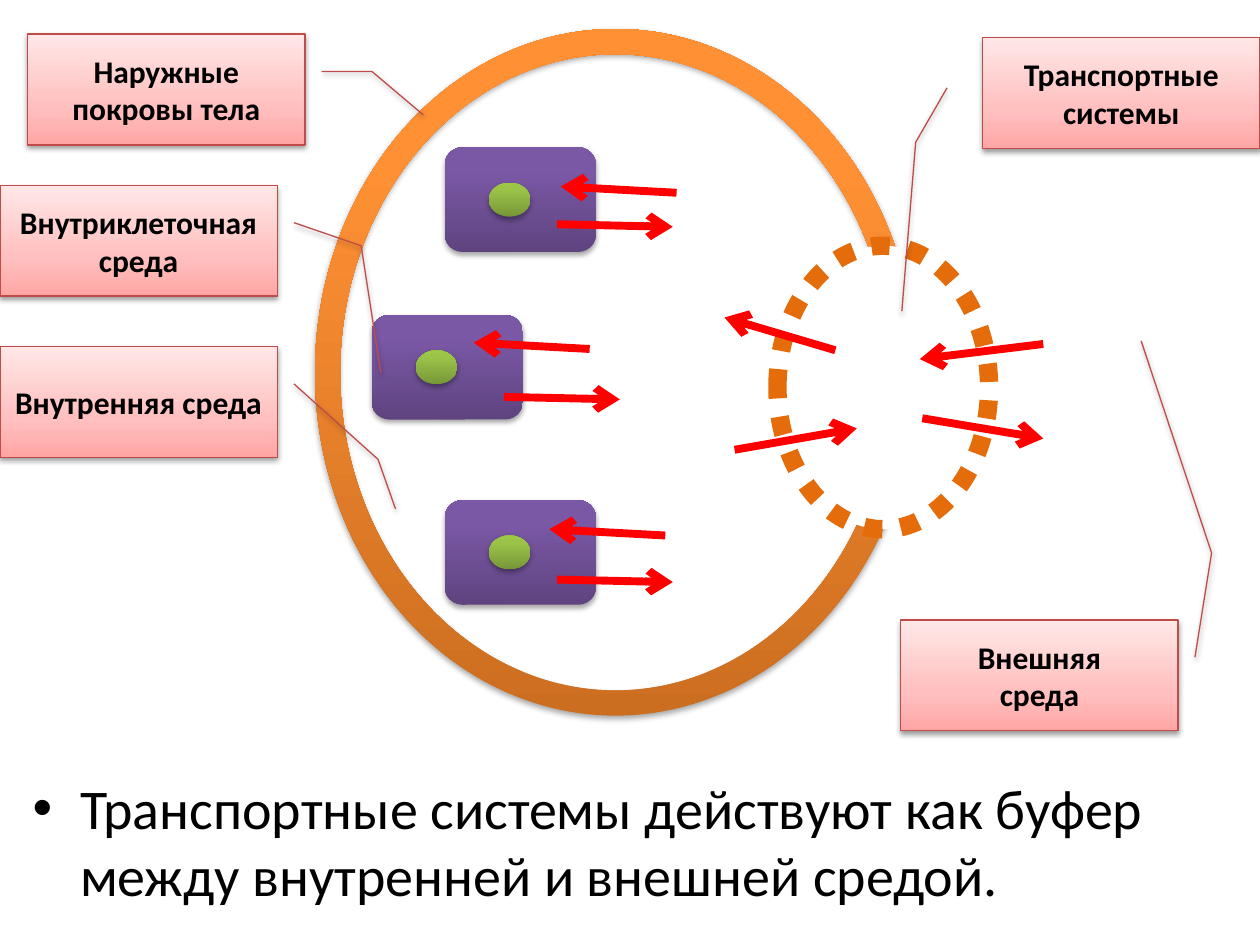
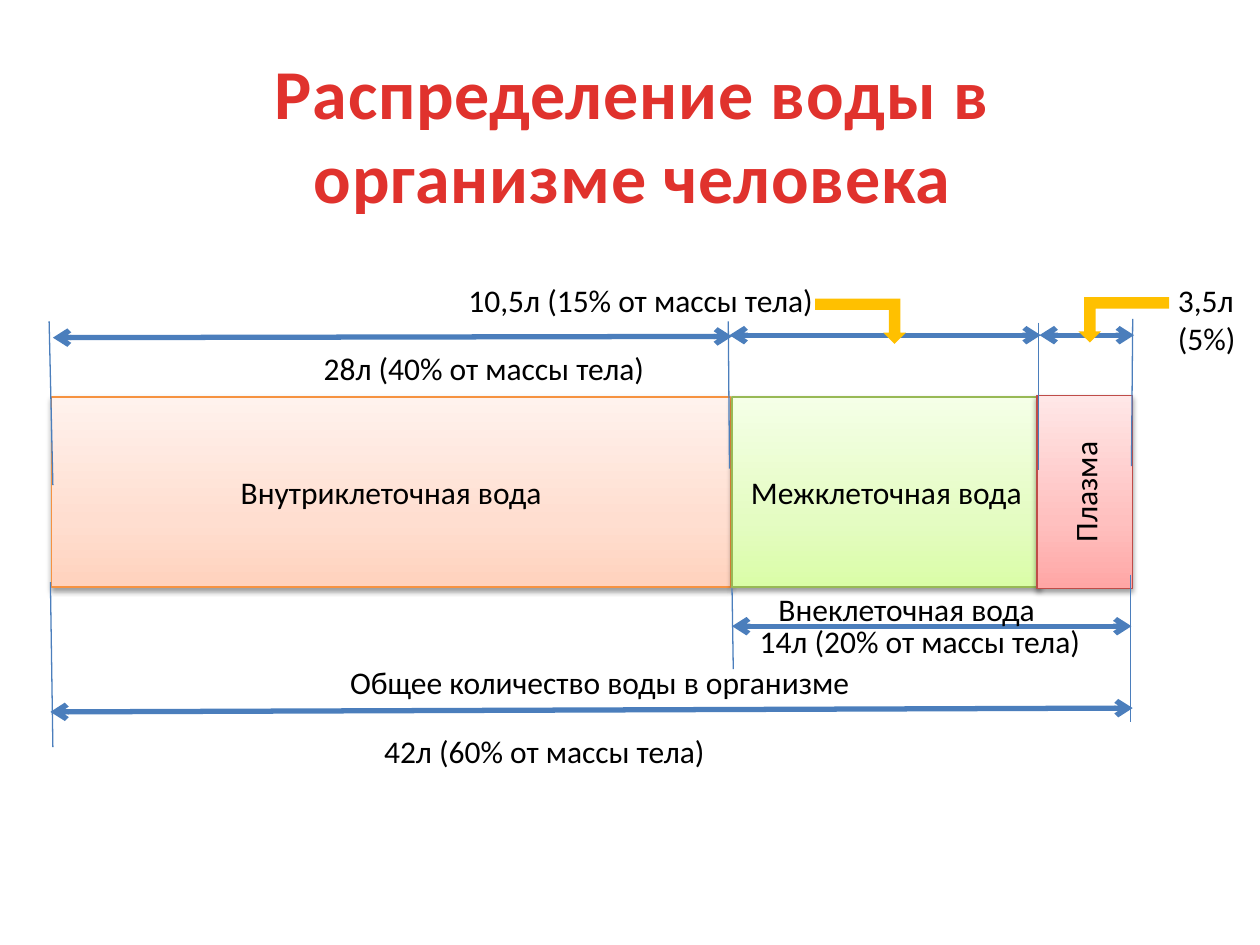
import dataclasses

import lxml.etree
import pptx
import pptx.dml.color
import pptx.enum.dml
import pptx.enum.shapes
import pptx.enum.text
import pptx.oxml.ns
import pptx.util

Inches = pptx.util.Inches
Pt = pptx.util.Pt
qn = pptx.oxml.ns.qn
SHAPE = pptx.enum.shapes.MSO_SHAPE
ALIGN = pptx.enum.text.PP_ALIGN
ANCHOR = pptx.enum.text.MSO_ANCHOR
FIT = pptx.enum.text.MSO_AUTO_SIZE


@dataclasses.dataclass(frozen=True)
class Theme:
    """Colours as RRGGBB, gradients as (percent, colour) stops from the bottom up, sizes in points."""
    font: str = "Calibri"
    text: str = "000000"
    paper: str = "FFFFFF"
    title: str = "E0322D"
    membrane: str = "E46C0A"
    flow: str = "FF0000"
    dimension: str = "4B7EBC"
    pointer: str = "FFC000"
    skin: tuple = ((0, "CC6E20"), (80, "FF9034"), (100, "FF9136"))
    cell: tuple = ((0, "5F4480"), (80, "7B58A6"), (100, "7C57A8"))
    nucleus: tuple = ((0, "779737"), (80, "9BC348"), (100, "9DC746"))
    pink: tuple = ((0, "FFA6A5"), (35, "FFC0BF"), (100, "FFE7E7"))
    peach: tuple = ((0, "FFD2BD"), (35, "FFDED0"), (100, "FFF2ED"))
    lime: tuple = ((0, "DAFDA7"), (35, "E4FCC2"), (100, "F5FFE7"))
    pink_edge: str = "BF4C48"
    peach_edge: str = "F69240"
    lime_edge: str = "98B955"
    title_size: int = 40
    body_size: int = 32
    label_size: int = 18
    thin: float = 0.75
    dimension_width: float = 3
    flow_width: float = 4.5
    membrane_width: float = 10.5


def rgb(code):
    return pptx.dml.color.RGBColor.from_string(code)


def add_xml(parent, tag, **attributes):
    return lxml.etree.SubElement(parent, qn(tag), attributes)


class Deck:
    def __init__(self, theme):
        self.theme = theme
        self.show = pptx.Presentation()
        self.show.slide_width, self.show.slide_height = Inches(10), Inches(7.5)
        self.slide = None

    def new_slide(self, layout):
        self.slide = self.show.slides.add_slide(self.show.slide_layouts.get_by_name(layout))
        background = self.slide.background.fill
        background.solid()
        background.fore_color.rgb = rgb(self.theme.paper)

    def set_text(self, frame, text, size, color=None, align=ALIGN.LEFT, bold=False, **frame_format):
        frame.text = text
        for key, value in frame_format.items():
            setattr(frame, key, value)
        font_format = {"name": self.theme.font, "size": Pt(size), "bold": bold}
        for paragraph in frame.paragraphs:
            paragraph.alignment = align
            font = paragraph.runs[0].font
            for key, value in font_format.items():
                setattr(font, key, value)
            font.color.rgb = rgb(color or self.theme.text)

    def place(self, target, left, top, width, height):
        box = {"left": left, "top": top, "width": width, "height": height}
        for key, value in box.items():
            setattr(target, key, Inches(value))

    def title(self, text, *box):
        heading = self.slide.shapes.title
        self.place(heading, *box)
        self.set_text(heading.text_frame, text, self.theme.title_size, self.theme.title,
                      ALIGN.CENTER, True, auto_size=FIT.NONE, vertical_anchor=ANCHOR.TOP)
        run = heading.text_frame.paragraphs[0].runs[0]
        run._r.get_or_add_rPr().set("spc", "50")

    def body(self, text, *box):
        """Fill the bulleted placeholder of a slide that has no title."""
        heading = self.slide.shapes.title
        heading.element.getparent().remove(heading.element)
        bullets = self.slide.placeholders[1]
        self.place(bullets, *box)
        self.set_text(bullets.text_frame, text, self.theme.body_size, auto_size=FIT.NONE)

    def label(self, text, left, top, width, height=0.4, wrap=False):
        box = self.slide.shapes.add_textbox(*map(Inches, (left, top, width, height)))
        self.set_text(box.text_frame, text, self.theme.label_size,
                      word_wrap=wrap, auto_size=FIT.SHAPE_TO_FIT_TEXT)

    def shape(self, kind, box, fill, edge=None, edge_width=None, adjust=(), shapes=None):
        """A flat fill is a colour; a gradient fill is a tuple of stops and casts a shadow."""
        shapes = self.slide.shapes if shapes is None else shapes
        shape = shapes.add_shape(kind, *map(Inches, box))
        for index, value in enumerate(adjust):
            shape.adjustments[index] = value
        shape.shadow.inherit = False
        if isinstance(fill, str):
            shape.fill.solid()
            shape.fill.fore_color.rgb = rgb(fill)
        else:
            self.gradient(shape, fill)
            self.shadow(shape, 38 if edge else 35)
        if edge:
            shape.line.color.rgb = rgb(edge)
            shape.line.width = Pt(edge_width or self.theme.thin)
        else:
            shape.line.fill.background()
        return shape

    def gradient(self, shape, stops):
        shape.fill.gradient()
        shape.fill.gradient_angle = 90
        stop_list = shape.element.spPr.find(qn("a:gradFill")).find(qn("a:gsLst"))
        for old in list(stop_list):
            stop_list.remove(old)
        for percent, color in stops:
            stop = add_xml(stop_list, "a:gs", pos=str(percent * 1000))
            add_xml(stop, "a:srgbClr", val=color)

    def shadow(self, shape, opacity):
        effects = shape.element.spPr.find(qn("a:effectLst"))
        cast = add_xml(effects, "a:outerShdw", blurRad=str(Pt(3.1)), dist=str(Pt(1.7)),
                       dir="5400000", rotWithShape="0")
        color = add_xml(cast, "a:srgbClr", val="000000")
        add_xml(color, "a:alpha", val=str(opacity * 1000))

    def panel(self, text, kind, box, fill, edge, bold=False, adjust=()):
        panel = self.shape(kind, box, fill, edge, adjust=adjust)
        self.set_text(panel.text_frame, text, self.theme.label_size, align=ALIGN.CENTER,
                      bold=bold, word_wrap=True, vertical_anchor=ANCHOR.MIDDLE)
        return panel

    def callout(self, text, left, top, leader):
        self.panel(text, SHAPE.LINE_CALLOUT_2, (left, top, 2.2, 0.88), self.theme.pink,
                   self.theme.pink_edge, True, leader)

    def cell(self, left, top):
        group = self.slide.shapes.add_group_shape()
        self.shape(SHAPE.FLOWCHART_ALTERNATE_PROCESS, (left, top, 1.2, 0.83),
                   self.theme.cell, shapes=group.shapes)
        self.shape(SHAPE.OVAL, (left + 0.35, top + 0.28, 0.33, 0.27),
                   self.theme.nucleus, shapes=group.shapes)

    def line(self, start, end, color, width, arrows=()):
        """Arrows names the ends that get an arrowhead, headEnd before tailEnd."""
        line = self.slide.shapes.add_connector(
            pptx.enum.shapes.MSO_CONNECTOR.STRAIGHT, *map(Inches, (*start, *end)))
        line.line.color.rgb = rgb(color)
        line.line.width = Pt(width)
        properties = line._element.spPr
        for arrow in arrows:
            add_xml(properties.find(qn("a:ln")), "a:" + arrow, type="arrow")
        add_xml(properties, "a:effectLst")

    def flow(self, start, end):
        self.line(start, end, self.theme.flow, self.theme.flow_width, ["tailEnd"])

    def dimension(self, start, end):
        self.line(start, end, self.theme.dimension, self.theme.dimension_width,
                  ["headEnd", "tailEnd"])

    def boundary(self, start, end):
        self.line(start, end, self.theme.dimension, self.theme.thin)

    def pointer(self, left, top, **flips):
        arrow = self.shape(SHAPE.BENT_UP_ARROW, (left, top, 0.72, 0.36), self.theme.pointer)
        for key, value in flips.items():
            arrow.element.spPr.find(qn("a:xfrm")).set(key, value)


def exchange_slide(deck):
    theme = deck.theme
    deck.new_slide("Title and Content")
    deck.body("Транспортные системы действуют как буфер между внутренней и внешней средой.",
              0.16, 6.09, 9.84, 1.41)
    deck.shape(SHAPE.DONUT, (2.5, 0.23, 4.77, 5.45), theme.skin, adjust=[0.042])
    for left, top in [(2.95, 2.5), (3.53, 1.17), (3.53, 3.97)]:
        deck.cell(left, top)
    transport = deck.shape(SHAPE.OVAL, (6.17, 1.95, 1.68, 2.25), theme.paper,
                           theme.membrane, theme.membrane_width)
    transport.line.dash_style = pptx.enum.dml.MSO_LINE.ROUND_DOT

    for x, y in [(5.37, 1.53), (4.68, 2.77), (5.28, 4.25)]:
        deck.flow((x, y), (x - 0.92, y - 0.05))
    for x, y in [(4.42, 1.78), (4, 3.15), (4.42, 4.6)]:
        deck.flow((x, y), (x + 0.92, y + 0.02))
    for start, end in [((6.63, 2.78), (5.75, 2.52)), ((5.83, 3.57), (6.8, 3.4)),
                       ((8.28, 2.73), (7.3, 2.85)), ((7.32, 3.32), (8.28, 3.48))]:
        deck.flow(start, end)

    right_side = (0.338, 1.061)
    for text, left, top, leader in [
        ("Внутриклеточная среда", 0, 1.47, (*right_side, 0.546, 1.303, 1.691, 1.374)),
        ("Внутренняя среда", 0, 2.75, (*right_side, 1.018, 1.364, 1.465, 1.427)),
        ("Наружные покровы тела", 0.22, 0.27, (*right_side, 0.338, 1.242, 0.729, 1.427)),
        ("Транспортные системы", 7.8, 0.3, (0.452, -0.129, 0.942, -0.242, 2.465, -0.292)),
        ("Внешняя\nсреда", 7.15, 4.92, (*right_side, -0.605, 1.121, -2.517, 0.867)),
    ]:
        deck.callout(text, left, top, leader)


def water_slide(deck):
    theme = deck.theme
    deck.new_slide("Title Only")
    deck.title("Распределение воды в организме человека", 0.84, 0.34, 8.36, 1.45)
    for text, box, fill, edge in [
        ("Внутриклеточная вода", (0.41, 3.15, 5.39, 1.51), theme.peach, theme.peach_edge),
        ("Межклеточная вода", (5.81, 3.15, 2.45, 1.51), theme.lime, theme.lime_edge),
    ]:
        deck.panel(text, SHAPE.RECTANGLE, box, fill, edge)
    plasma = deck.panel("Плазма", SHAPE.RECTANGLE, (8.23, 3.14, 0.76, 1.53),
                        theme.pink, theme.pink_edge)
    plasma.text_frame._txBody.bodyPr.set("vert", "vert270")

    for start, end in [((0.42, 2.68), (5.81, 2.67)), ((5.79, 2.66), (8.26, 2.66)),
                       ((8.25, 2.66), (9, 2.66)), ((0.4, 5.65), (8.99, 5.62)),
                       ((5.81, 4.97), (8.98, 4.97))]:
        deck.dimension(start, end)
    for start, end in [((0.39, 2.55), (0.42, 3.85)), ((5.78, 2.55), (5.79, 3.72)),
                       ((8.24, 2.56), (8.24, 3.73)), ((8.99, 2.53), (8.98, 3.7)),
                       ((0.4, 4.62), (0.42, 5.93)), ((5.81, 4.67), (5.82, 5.31)),
                       ((8.97, 4.56), (8.97, 5.73))]:
        deck.boundary(start, end)

    for text, left, top, width in [
        ("28л (40% от массы тела)", 2.47, 2.72, 2.78),
        ("10,5л (15% от массы тела)", 3.62, 2.18, 2.97),
        ("14л (20% от массы тела)", 5.93, 4.89, 2.78),
        ("42л (60% от массы тела)", 2.95, 5.76, 2.78),
    ]:
        deck.label(text, left, top, width)
    deck.label("3,5л\n(5%)", 9.25, 2.18, 0.71, 0.71)
    deck.label("Внеклеточная вода", 6.08, 4.63, 2.56, wrap=True)
    deck.label("Общее количество воды в организме", 2.68, 5.21, 4.49, wrap=True)
    deck.pointer(6.47, 2.37, flipV="1")
    deck.pointer(8.56, 2.36, flipH="1", flipV="1")


def main():
    deck = Deck(Theme())
    exchange_slide(deck)
    water_slide(deck)
    deck.show.save("out.pptx")


if __name__ == "__main__":
    main()
